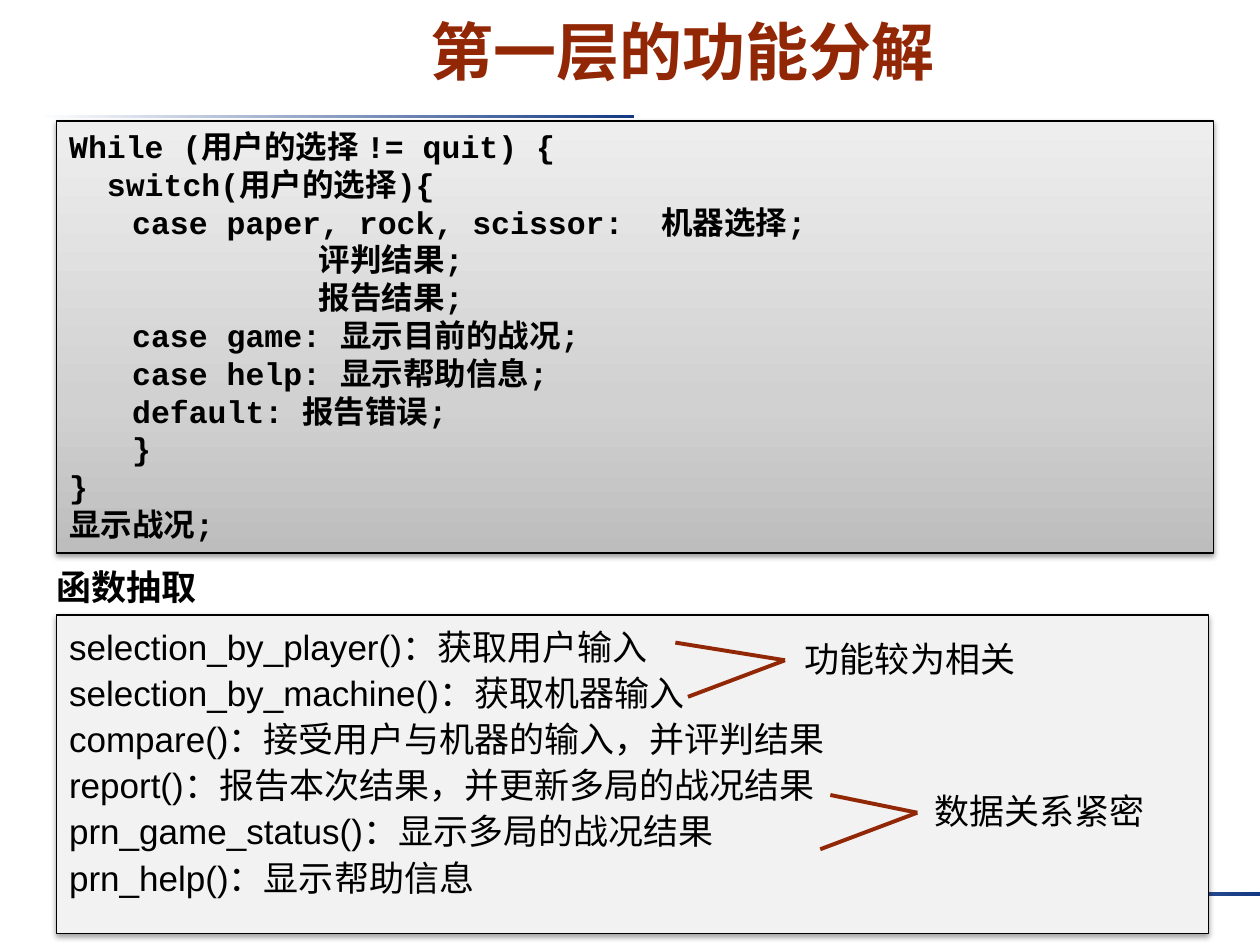
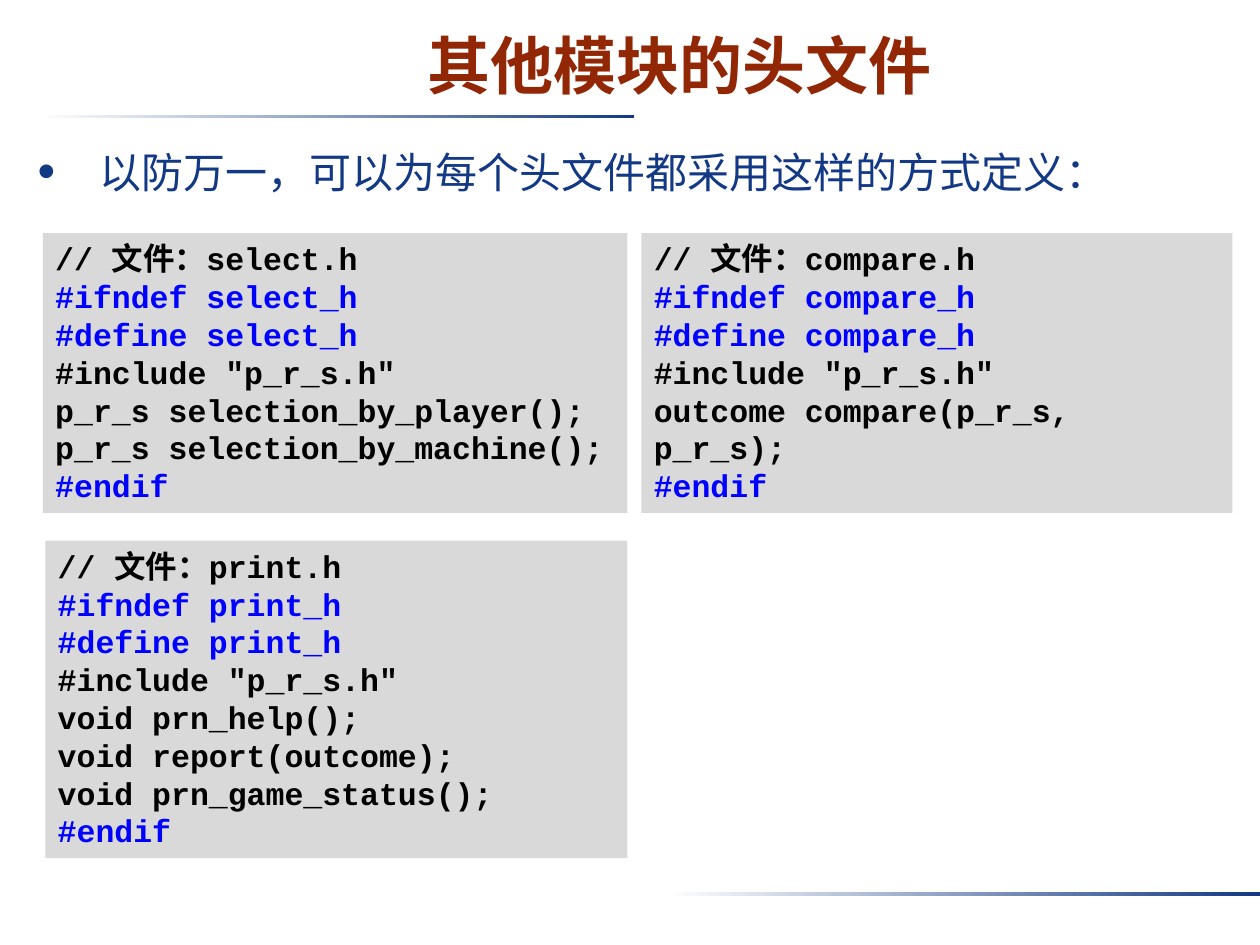
"""Build two slides on splitting a game into functions and header files."""
import copy

import lxml.etree
import pptx
import pptx.dml.color
import pptx.enum.shapes
import pptx.enum.text
import pptx.oxml.ns
import pptx.util

WIDE, HIGH = 10, 7.5
HUES = {
    "brick": "922706", "navy": "133984", "black": "000000", "white": "FFFFFF",
    "blue": "0000FF", "pale": "F2F2F2", "grey": "D9D9D9",
    "dark": "BDBDBD", "mid": "D1D1D1", "light": "EEEEEE",
}
TINT = {name: pptx.dml.color.RGBColor.from_string(code) for name, code in HUES.items()}
RECT = pptx.enum.shapes.MSO_SHAPE.RECTANGLE
LINE = pptx.enum.shapes.MSO_CONNECTOR.STRAIGHT
TOP = pptx.enum.text.MSO_ANCHOR.TOP
LEFT = pptx.enum.text.PP_ALIGN.LEFT
qn = pptx.oxml.ns.qn


def place(*spot):
    """Turn percent shares of the slide, x and y in turn, into lengths."""
    sides = (WIDE, HIGH) * 2
    return [pptx.util.Inches(side * part / 100) for side, part in zip(sides, spot)]


def box(shapes, spot, lines, size, face, fill=None, bold=False, ink="black", gap=None, edge=False):
    """Add a text box, or a filled rectangle when a fill is given."""
    if fill:
        item = shapes.add_shape(RECT, *place(*spot))
        item.fill.solid()
        item.fill.fore_color.rgb = TINT[fill]
        item.shadow.inherit = False
    else:
        item = shapes.add_textbox(*place(*spot))
    if edge:
        item.line.color.rgb = TINT["black"]
        item.line.width = pptx.util.Pt(0.75)
        glow = lxml.etree.SubElement(
            item.element.spPr.find(qn("a:effectLst")), qn("a:outerShdw"),
            blurRad="39370", dist="20320", dir="5400000", rotWithShape="0")
        tone = lxml.etree.SubElement(glow, qn("a:srgbClr"), val=HUES["black"])
        lxml.etree.SubElement(tone, qn("a:alpha"), val="38000")
    else:
        item.line.fill.background()
    frame = item.text_frame
    frame.text = "\n".join(lines)
    frame.word_wrap = True
    frame.vertical_anchor = TOP
    for para in frame.paragraphs:
        para.alignment = LEFT
        if gap:
            para.line_spacing = gap
        for run in para.runs:
            font = run.font
            font.name, font.size, font.bold = face, pptx.util.Pt(size), bold
            guard = run.text.startswith(("#ifndef", "#define", "#endif"))
            font.color.rgb = TINT["blue" if guard else ink]
    return item


deck = pptx.Presentation()
deck.slide_width, deck.slide_height = pptx.util.Inches(WIDE), pptx.util.Inches(HIGH)
plan = deck.slide_layouts[5]
heads = [
    ("第一层的功能分解", (16.5, 0.53, 75.4, 10.53)),
    ("其他模块的头文件", (24, 2, 59.9, 12)),
]
for text, spot in heads:
    title = deck.slides.add_slide(plan).shapes.title
    title.left, title.top, title.width, title.height = place(*spot)
    frame = title.text_frame
    frame.text = text
    frame.auto_size = pptx.enum.text.MSO_AUTO_SIZE.NONE
    frame.vertical_anchor = TOP
    frame.margin_top = pptx.util.Inches(0.06)
    para = frame.paragraphs[0]
    para.alignment = pptx.enum.text.PP_ALIGN.CENTER
    font = para.runs[0].font
    font.name, font.size, font.bold = "Arial", pptx.util.Pt(36), True
    font.color.rgb = TINT["brick"]
first, second = [slide.shapes for slide in deck.slides]

for num, (x, y) in enumerate([(3.1, 12.13), (52.8, 94.4)]):
    band = first.add_shape(RECT, *place(x, y, 47.2, 0.4))
    band.shadow.inherit = False
    band.line.fill.background()
    band.fill.gradient()
    band.fill.gradient_angle = 0
    for stop, name in zip(band.fill.gradient_stops, ["white", "navy"]):
        stop.color.rgb = TINT[name]
    band.element.nvSpPr.cNvPr.set("id", str(20 + num))
    plan.shapes.element.append(band.element)

tasks = [
    "selection_by_player()：获取用户输入",
    "selection_by_machine()：获取机器输入",
    "compare()：接受用户与机器的输入，并评判结果",
    "report()：报告本次结果，并更新多局的战况结果",
    "prn_game_status()：显示多局的战况结果",
    "prn_help()：显示帮助信息",
]
box(first, (4.5, 65.07, 91.4, 33.73), tasks, 20, "Arial", "pale", gap=1.1, edge=True)

steps = [
    "While (用户的选择 != quit) {",
    "  switch(用户的选择){",
    "\tcase paper, rock, scissor:  机器选择;",
    "评判结果;",
    "报告结果;",
    "\tcase game: 显示目前的战况;",
    "\tcase help: 显示帮助信息;",
    "\tdefault: 报告错误;",
    "\t}",
    "}",
    "显示战况;",
]
code = box(first, (4.5, 12.8, 91.8, 45.73), steps, 18, "Courier New", "grey", True, edge=True)
for para in code.text_frame.paragraphs[3:5]:
    para._p.get_or_add_pPr().set("marL", str(pptx.util.Inches(1.98)))
code.fill.gradient()
code.fill.gradient_angle = 90
ramp = code.element.spPr.find(".//" + qn("a:gsLst"))
ramp.insert(1, copy.deepcopy(ramp[0]))
shades = [("dark", 0), ("mid", 0.35), ("light", 1)]
for stop, (name, share) in zip(code.fill.gradient_stops, shades):
    stop.color.rgb = TINT[name]
    stop.position = share

label = box(first, (3.5, 59.2, 13.2, 5.87), ["函数抽取"], 20, "Arial", bold=True)
label.text_frame.word_wrap = False

notes = [
    ("数据关系紧密", 72.8, 86, 6.9, 73.2),
    ("功能较为相关", 62.3, 69.87, 8.7, 62.9),
]
for text, tip, mid, reach, left in notes:
    group = first.add_group_shape().shapes
    for x, y in [(tip - reach, mid - 1.87), (tip - 7.7, mid + 3.87)]:
        arm = group.add_connector(LINE, *place(x, y, tip, mid))
        arm.line.color.rgb = TINT["brick"]
        arm.line.width = pptx.util.Pt(2.25)
        lxml.etree.SubElement(arm.element.spPr, qn("a:effectLst"))
    box(group, (left, mid - 3.07, 19.7, 5.87), [text], 20, "Arial")

files = [
    ("select", (3.4, 24.67, 46.4, 29.6),
     ["p_r_s selection_by_player();", "p_r_s selection_by_machine();"]),
    ("compare", (50.9, 24.67, 46.9, 29.6), ["outcome compare(p_r_s, p_r_s);"]),
    ("print", (3.6, 57.2, 46.2, 33.6),
     ["void prn_help();", "void report(outcome);", "void prn_game_status();"]),
]
for name, spot, calls in files:
    lines = [f"// 文件：{name}.h", f"#ifndef {name}_h", f"#define {name}_h",
             '#include "p_r_s.h"', *calls, "#endif"]
    box(second, spot, lines, 18, "Courier New", "grey", True)

point = box(second, (2, 14.27, 88.8, 7.73), ["以防万一，可以为每个头文件都采用这样的方式定义："],
            24, "Courier New", ink="navy", gap=1.1)
props = point.text_frame.paragraphs[0]._p.get_or_add_pPr()
hang = pptx.util.Inches(0.49)
props.set("marL", str(hang))
props.set("indent", str(-hang))
for tag, key, val in [("buSzPct", "val", "120000"), ("buFont", "typeface", "Arial"), ("buChar", "char", "•")]:
    lxml.etree.SubElement(props, qn("a:" + tag)).set(key, val)

deck.save("out.pptx")
